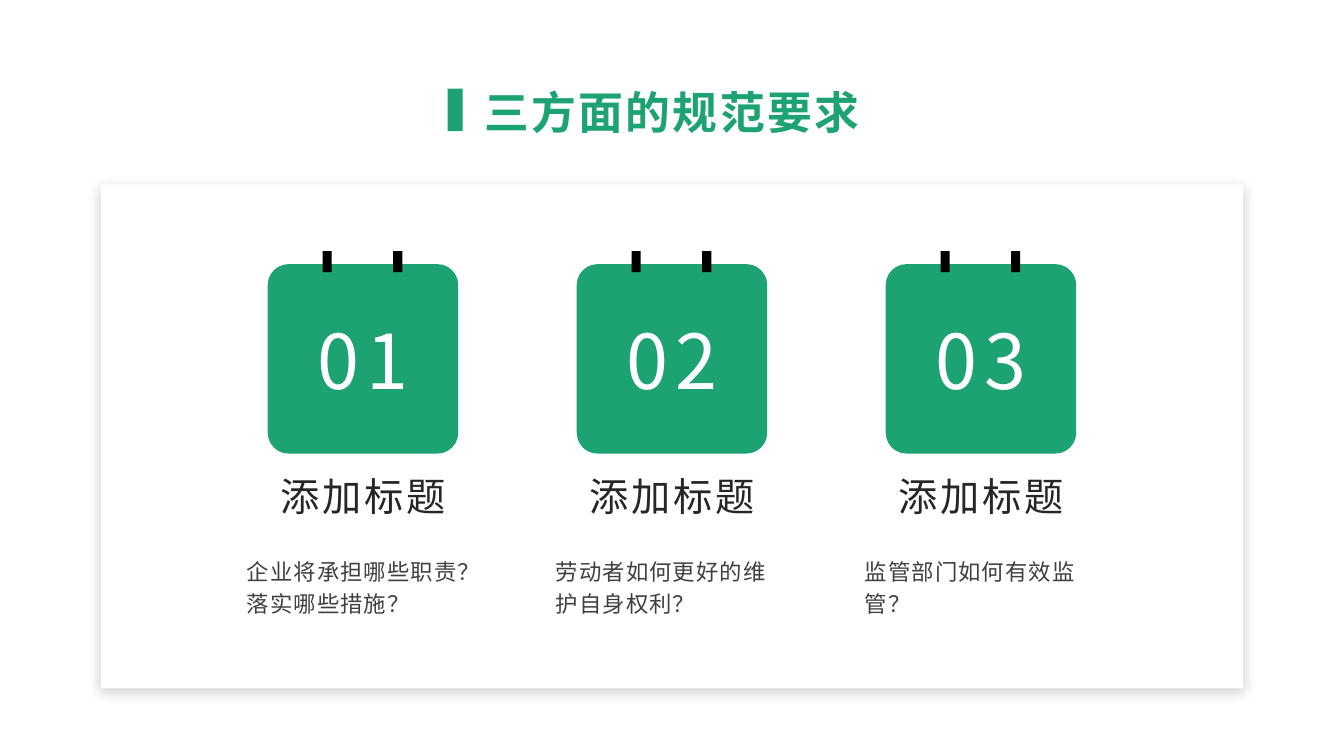
"""Builds a slide with three calendar cards on a shadowed panel."""
from dataclasses import dataclass

from lxml.etree import SubElement
from pptx import Presentation
from pptx.dml.color import RGBColor
from pptx.enum.shapes import MSO_SHAPE
from pptx.enum.text import MSO_ANCHOR, MSO_AUTO_SIZE, PP_ALIGN
from pptx.oxml.ns import qn
from pptx.util import Inches, Pt

COLORS = {
    "green": "1DA272",
    "white": "FFFFFF",
    "black": "000000",
    "heading": "262626",
    "body": "404040",
    "shadow": "0D0D0D",
}
FONT = "Noto Sans CJK SC"
CARDS = [
    ("01", "添加标题", "企业将承担哪些职责？落实哪些措施？"),
    ("02", "添加标题", "劳动者如何更好的维护自身权利？"),
    ("03", "添加标题", "监管部门如何有效监管？"),
]
CARD_WIDTH = 18.75
CARD_PITCH = 22.99


@dataclass
class Box:
    """A rectangle in EMU."""

    left: int
    top: int
    width: int
    height: int

    def inner(self, left, top, width, height):
        """Return an inner box given in percent of this one."""
        return Box(
            int(self.left + self.width * left / 100),
            int(self.top + self.height * top / 100),
            int(self.width * width / 100),
            int(self.height * height / 100),
        )

    def bounds(self):
        """Return left, top, width and height."""
        return self.left, self.top, self.width, self.height


def color(name):
    """Return the named colour."""
    return RGBColor.from_string(COLORS[name])


def paint(shape, name):
    """Give a shape a flat fill without line or shadow."""
    shape.shadow.inherit = False
    shape.fill.solid()
    shape.fill.fore_color.rgb = color(name)
    shape.line.fill.background()


def add_block(slide, kind, box, name):
    """Add a flat preset shape."""
    shape = slide.shapes.add_shape(kind, *box.bounds())
    paint(shape, name)
    return shape


def write(shape, text, size, name, tracking, align=PP_ALIGN.CENTER,
          anchor=MSO_ANCHOR.TOP, insets=(0.1, 0.05), line_spacing=1.0,
          space_after=0, bold=False):
    """Write one formatted paragraph into a shape."""
    frame = shape.text_frame
    frame.word_wrap = True
    frame.auto_size = MSO_AUTO_SIZE.NONE
    frame.vertical_anchor = anchor
    frame.margin_left = frame.margin_right = Inches(insets[0])
    frame.margin_top = frame.margin_bottom = Inches(insets[1])
    paragraph = frame.paragraphs[0]
    paragraph.alignment = align
    paragraph.line_spacing = line_spacing
    paragraph.space_before = Pt(0)
    paragraph.space_after = Pt(space_after)
    run = paragraph.add_run()
    run.text = text
    run.font.size = Pt(size)
    run.font.bold = bold
    run.font.name = FONT
    run.font.color.rgb = color(name)
    properties = run._r.get_or_add_rPr()
    properties.set("spc", str(round(tracking * 100)))
    east_asian = SubElement(properties, qn("a:ea"))
    east_asian.set("typeface", FONT)


def add_text(slide, box, *args, **options):
    """Add a text box with one paragraph."""
    write(slide.shapes.add_textbox(*box.bounds()), *args, **options)


def add_title(slide, box):
    """Place the title."""
    title = slide.shapes.title
    title.left, title.top, title.width, title.height = box.bounds()
    write(title, "三方面的规范要求", 32, "green", 1.6,
          anchor=MSO_ANCHOR.MIDDLE, insets=(0.07, 0.03), bold=True)


def add_panel(slide, box):
    """Add the white panel with its soft shadow."""
    panel = add_block(slide, MSO_SHAPE.RECTANGLE, box, "white")
    effects = panel._element.spPr.find(qn("a:effectLst"))
    shadow = SubElement(effects, qn("a:outerShdw"), blurRad=str(Pt(10)),
                        dist=str(Pt(3)), dir="5400000", algn="t",
                        rotWithShape="0")
    tint = SubElement(shadow, qn("a:srgbClr"), val=COLORS["shadow"])
    SubElement(tint, qn("a:alpha"), val="20000")


def add_rings(slide, box):
    """Draw both binder rings as one outline."""
    rings = [box.inner(left, 0, 11.4, 100) for left in (88.6, 0)]
    builder = slide.shapes.build_freeform(rings[0].left, rings[0].top)
    for index, ring in enumerate(rings):
        right, bottom = ring.left + ring.width, ring.top + ring.height
        if index:
            builder.move_to(ring.left, ring.top)
        builder.add_line_segments(
            [(right, ring.top), (right, bottom), (ring.left, bottom)])
    paint(builder.convert_to_shape(), "black")


def add_card(slide, box, number, heading, question):
    """Add a calendar badge with its heading and question."""
    badge = add_block(slide, MSO_SHAPE.ROUNDED_RECTANGLE,
                      box.inner(12.2, 3.52, 75.6, 50.95), "green")
    badge.adjustments[0] = 0.11
    add_rings(slide, box.inner(34, 0, 31.6, 5.69))
    add_text(slide, box.inner(0, 79.67, 100, 20.33), question, 16, "body", 0.8,
             align=PP_ALIGN.LEFT, line_spacing=1.2, space_after=8)
    add_text(slide, box.inner(0, 60.7, 100, 16.26), heading, 28, "heading", 2,
             line_spacing=0.8)
    add_text(slide, box.inner(25, 13.28, 50, 31.71), number, 54, "white", 4.8,
             anchor=MSO_ANCHOR.MIDDLE, insets=(0, 0), space_after=8)


def main():
    """Build and save the presentation."""
    presentation = Presentation()
    presentation.slide_width = Inches(13.33)
    presentation.slide_height = Inches(7.5)
    slide = presentation.slides.add_slide(presentation.slide_layouts[5])
    page = Box(0, 0, presentation.slide_width, presentation.slide_height)
    add_title(slide, page.inner(7.5, 9.6, 85, 10.4))
    add_panel(slide, page.inner(7.5, 24.4, 85, 66.67))
    for index, card in enumerate(CARDS):
        left = 50 + (index - 1) * CARD_PITCH - CARD_WIDTH / 2
        add_card(slide, page.inner(left, 33.2, CARD_WIDTH, 49.2), *card)
    add_block(slide, MSO_SHAPE.RECTANGLE,
              page.inner(33.3, 11.73, 1.13, 5.6), "green")
    presentation.save("out.pptx")


if __name__ == "__main__":
    main()
